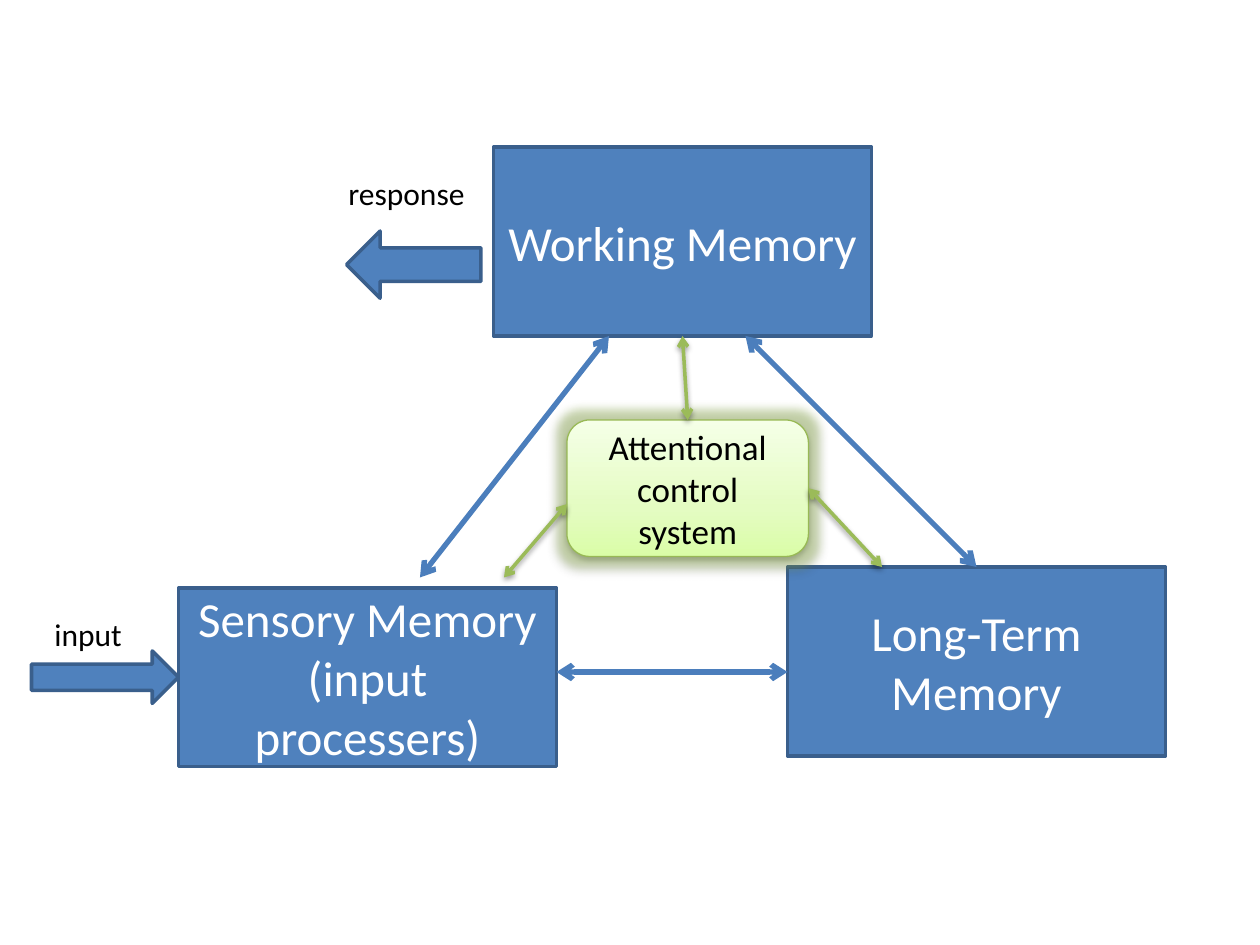
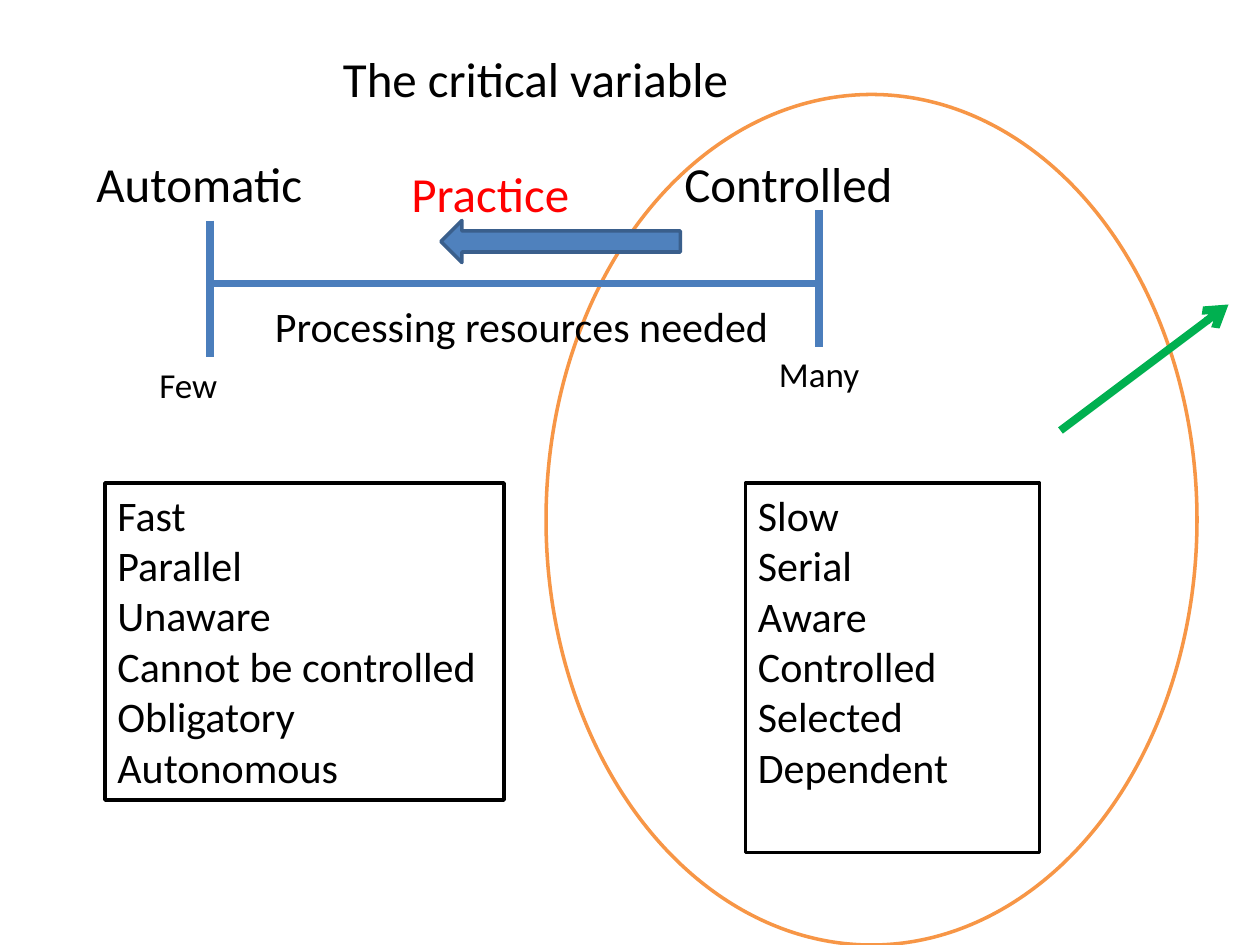
from lxml import etree
from pptx import Presentation, util as u
from pptx.dml.color import RGBColor
from pptx.enum import shapes as sh, text as tx
from pptx.oxml import parse_xml
from pptx.oxml.ns import qn, nsdecls

BLUE = RGBColor(0x4F, 0x81, 0xBD)
EDGE = RGBColor(0x3A, 0x5F, 0x8C)
LINK = RGBColor(0x4B, 0x7E, 0xBC)
LIME = RGBColor(0x9B, 0xBB, 0x59)
RIM = RGBColor(0x98, 0xB9, 0x55)
ORANGE = RGBColor(0xF7, 0x96, 0x46)
GREEN = RGBColor(0x00, 0xB0, 0x50)
RED = RGBColor(0xFF, 0x00, 0x00)
WHITE = RGBColor(0xFF, 0xFF, 0xFF)
BLACK = RGBColor(0x00, 0x00, 0x00)

COLS, ROWS = 120, 90
WIDE, HIGH = u.Inches(10), u.Inches(7.5)
FADE = [(0, "DAFDA7"), (35, "E4FCC2"), (100, "F5FFE7")]
KIND = sh.MSO_SHAPE
MID, TOP = tx.MSO_ANCHOR.MIDDLE, tx.MSO_ANCHOR.TOP
LEFT, CENTER = tx.PP_ALIGN.LEFT, tx.PP_ALIGN.CENTER
NORTH, SOUTH, EAST = 0, 2, 3

STYLES = {
    "store": dict(kind=KIND.RECTANGLE, fill=BLUE, edge=EDGE, width=2,
                  size=28, ink=WHITE, align=CENTER, anchor=MID),
    "control": dict(kind=KIND.ROUNDED_RECTANGLE, fill=None, edge=RIM, width=0.75,
                    size=20, ink=BLACK, align=CENTER, anchor=MID),
    "right": dict(kind=KIND.RIGHT_ARROW, fill=BLUE, edge=EDGE, width=2),
    "left": dict(kind=KIND.LEFT_ARROW, fill=BLUE, edge=EDGE, width=2),
    "ring": dict(kind=KIND.OVAL, fill=WHITE, edge=ORANGE, width=2),
    "traits": dict(kind=KIND.RECTANGLE, fill=WHITE, edge=BLACK, width=2,
                   size=24, ink=BLACK, align=LEFT, anchor=TOP),
    "title": dict(size=28, ink=BLACK, align=CENTER),
    "head": dict(size=28, ink=BLACK),
    "alert": dict(size=28, ink=RED),
    "axis": dict(size=24, ink=BLACK),
    "end": dict(size=20, ink=BLACK),
    "label": dict(size=18, ink=BLACK),
}
LINES = {
    "flow": dict(color=LINK, width=3, tips=("headEnd", "tailEnd"), shade=False),
    "guide": dict(color=LIME, width=2, tips=("headEnd", "tailEnd"), shade=True),
    "scale": dict(color=LINK, width=4.5, tips=(), shade=False),
    "point": dict(color=GREEN, width=4.5, tips=("tailEnd",), shade=False),
}

WORK, LONG, CARE = "Working Memory", "Long-Term Memory", "Attentional control system"
MODEL = [
    ("store", (47, 14, 36, 18), [WORK]),
    ("store", (75, 54, 36, 18), [LONG]),
    ("store", (17, 56, 36, 17), ["Sensory Memory", "(input processers)"]),
    ("flow", (53, 64), (75, 64)),
    ("flow", (40, 55), (58, 32)),
    ("flow", (LONG, NORTH), (71, 32)),
    ("control", (54, 40, 23, 13), [CARE]),
    ("guide", (48, 55), (54, 48)),
    ("guide", (84, 54), (CARE, EAST)),
    ("right", (3, 62, 14, 5), []),
    ("label", (4, 58, 11, 4.8), ["input"]),
    ("left", (33, 22, 12.8, 6.4), []),
    ("label", (32, 16, 16, 5), ["response"]),
    ("guide", (CARE, NORTH), (WORK, SOUTH)),
]
RANGE = [
    ("ring", (52, 9, 62, 81), []),
    ("scale", (20, 21), (20, 34)),
    ("scale", (78, 20), (78, 33)),
    ("scale", (20, 27), (78, 27)),
    ("head", (8, 14, 28, 6.8), ["Automatic"]),
    ("head", (64, 14, 30, 6.8), ["Controlled"]),
    ("traits", (10, 46, 38, 30.2),
     ["Fast", "Parallel", "Unaware", "Cannot be controlled", "Obligatory", "Autonomous"]),
    ("traits", (71, 46, 28, 35.2),
     ["Slow", "Serial", "Aware", "Controlled", "Selected", "Dependent"]),
    ("axis", (25, 28, 51, 6), ["Processing resources needed"]),
    ("end", (73, 33, 11, 5.3), ["Many"]),
    ("end", (14, 34, 11, 5.3), ["Few"]),
    ("alert", (38, 15, 21, 6.8), ["Practice"]),
    ("left", (42, 21, 22.8, 4), []),
    ("title", (11, 4, 80, 6.8), ["The critical variable"]),
    ("point", (101, 41), (117, 29)),
]


def place(*cells):
    return [int(c * (HIGH / ROWS if i % 2 else WIDE / COLS)) for i, c in enumerate(cells)]


def effect(item, glow=False, shade=False):
    props = item._element.spPr
    box = props.find(qn("a:effectLst"))
    if box is None:
        box = etree.SubElement(props, qn("a:effectLst"))
    if glow:
        box.append(parse_xml(
            f'<a:glow {nsdecls("a")} rad="139700"><a:srgbClr val="{LIME}">'
            '<a:alpha val="40000"/></a:srgbClr></a:glow>'))
    if shade:
        box.append(parse_xml(
            f'<a:outerShdw {nsdecls("a")} blurRad="40000" dist="20000" dir="5400000" '
            'rotWithShape="0"><a:srgbClr val="000000"><a:alpha val="38000"/>'
            '</a:srgbClr></a:outerShdw>'))


def blend(item):
    item.fill.background()
    props = item._element.spPr
    stops = "".join(f'<a:gs pos="{pos * 1000}"><a:srgbClr val="{tint}"/></a:gs>'
                    for pos, tint in FADE)
    props.replace(props.find(qn("a:noFill")), parse_xml(
        f'<a:gradFill {nsdecls("a")} rotWithShape="1"><a:gsLst>{stops}</a:gsLst>'
        '<a:lin ang="16200000" scaled="0"/></a:gradFill>'))


def write(item, words, style):
    frame = item.text_frame
    form = dict(word_wrap=True, auto_size=tx.MSO_AUTO_SIZE.NONE,
                vertical_anchor=style.get("anchor", TOP))
    for key, val in form.items():
        setattr(frame, key, val)
    for i, word in enumerate(words):
        para = frame.paragraphs[0] if i == 0 else frame.add_paragraph()
        para.alignment = style.get("align", LEFT)
        run = para.add_run()
        run.text = word
        for key, val in dict(name="Calibri", size=u.Pt(style["size"])).items():
            setattr(run.font, key, val)
        run.font.color.rgb = style["ink"]


def add_box(slide, name, cells, words):
    style = STYLES[name]
    if "kind" in style:
        item = slide.shapes.add_shape(style["kind"], *place(*cells))
        item.shadow.inherit = False
        if style["fill"] is None:
            blend(item)
            effect(item, glow=True, shade=True)
        else:
            item.fill.solid()
            item.fill.fore_color.rgb = style["fill"]
        item.line.color.rgb = style["edge"]
        item.line.width = u.Pt(style["width"])
    else:
        item = slide.shapes.add_textbox(*place(*cells))
    if words:
        write(item, words, style)
    return item


def add_line(slide, name, start, stop, made):
    style = LINES[name]
    ends = [(0, 0) if end[0] in made else end for end in (start, stop)]
    item = slide.shapes.add_connector(sh.MSO_CONNECTOR.STRAIGHT, *place(*ends[0], *ends[1]))
    for end, join in ((start, item.begin_connect), (stop, item.end_connect)):
        if end[0] in made:
            join(made[end[0]], end[1])
    item.line.color.rgb = style["color"]
    item.line.width = u.Pt(style["width"])
    ln = item._element.spPr.find(qn("a:ln"))
    for tip in style["tips"]:
        etree.SubElement(ln, qn("a:" + tip), type="arrow")
    effect(item, shade=style["shade"])


def main():
    deck = Presentation()
    deck.slide_width, deck.slide_height = WIDE, HIGH
    for parts in (MODEL, RANGE):
        slide = deck.slides.add_slide(deck.slide_layouts[6])
        made = {}
        for name, first, last in parts:
            if name in LINES:
                add_line(slide, name, first, last, made)
            else:
                item = add_box(slide, name, first, last)
                if last:
                    made[last[0]] = item
    deck.save("out.pptx")


if __name__ == "__main__":
    main()
